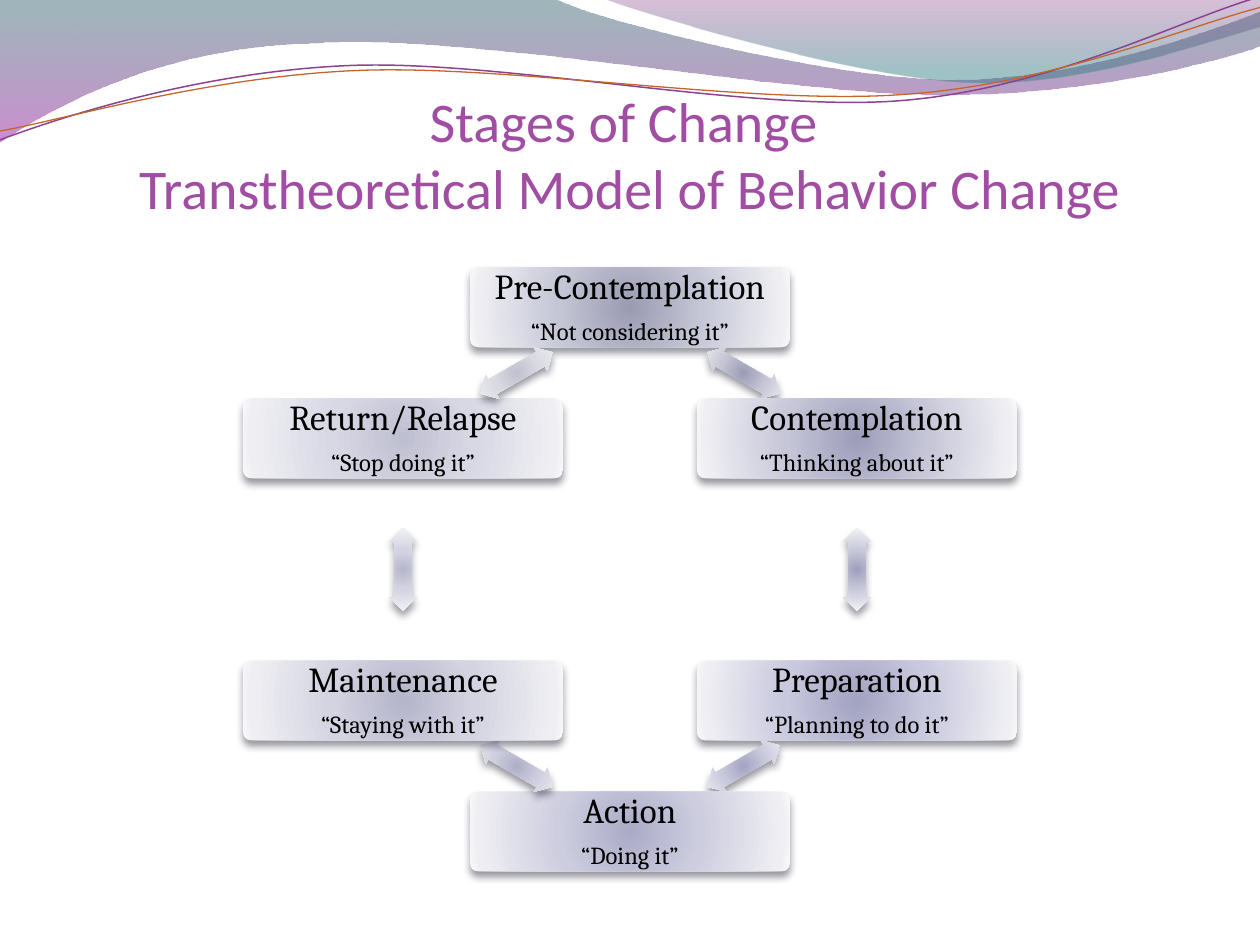
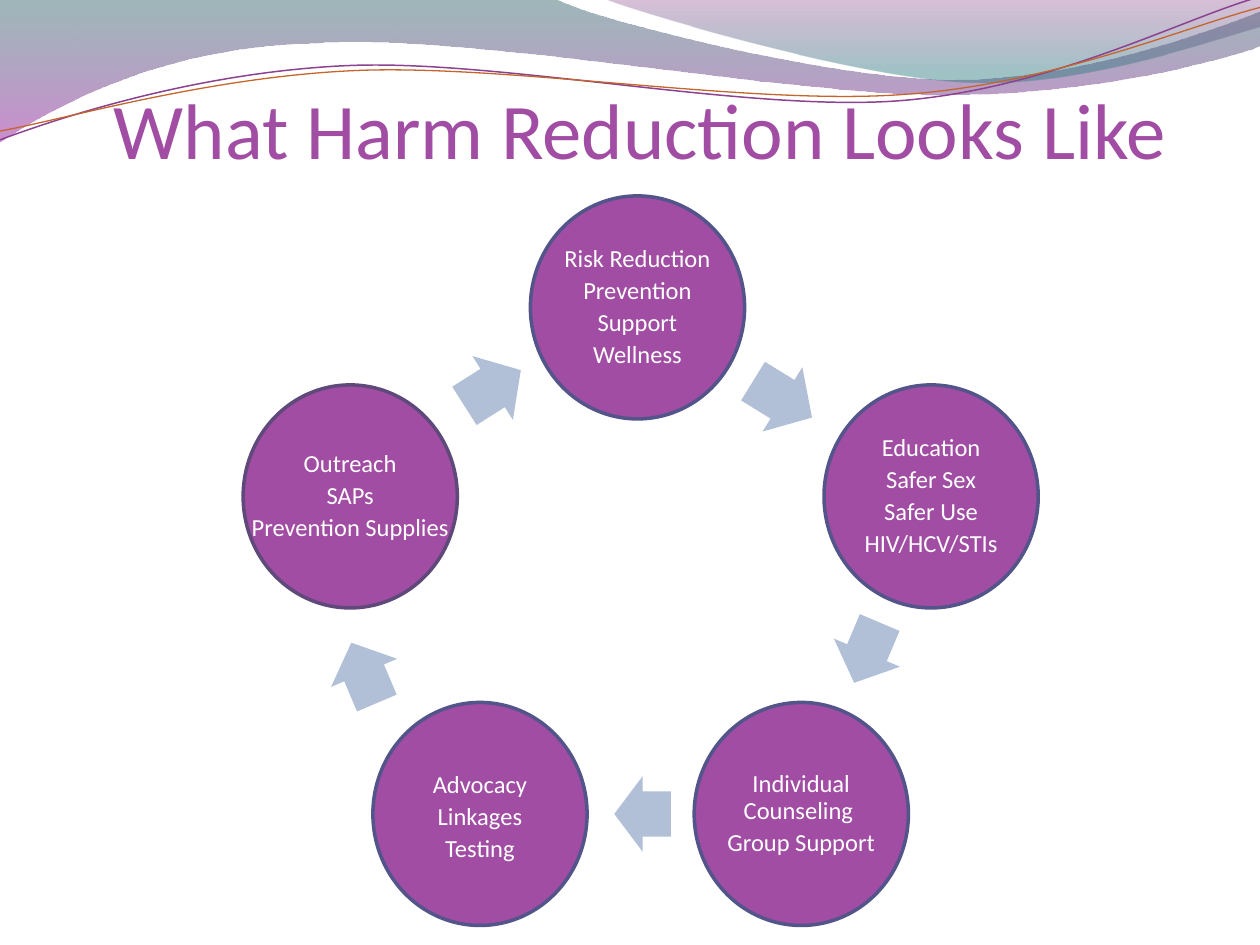
from dataclasses import dataclass
from math import cos, radians, sin

from lxml.etree import SubElement
from pptx import Presentation
from pptx.dml.color import RGBColor
from pptx.enum.shapes import MSO_SHAPE
from pptx.enum.text import MSO_ANCHOR, MSO_AUTO_SIZE, PP_ALIGN
from pptx.oxml.ns import qn
from pptx.util import Inches, Pt

PURPLE = "A04DA3"
NODE_BORDER = "53548A"
CYCLE_ARROW = "B1C0D7"
SHADOW = "222233"
WHITE = "FFFFFF"
BLACK = "000000"
BODY_FONT = "Calibri"
STAGE_FONT = "Cambria"


@dataclass
class Wave:
    """Curve legs hold 6 numbers (cubic), straight legs hold 2."""
    start: tuple
    legs: list
    stops: tuple = ()
    line: str = ""
    width: float = 0
    rotation: float = 0
    center: tuple = (0, 0)


@dataclass
class Stage:
    name: str
    quote: str
    colors: tuple
    arrow_colors: tuple


@dataclass
class Activity:
    lines: list
    center: tuple
    border: str = NODE_BORDER
    top: float = 0


@dataclass
class Arrow:
    center: tuple
    size: tuple
    rotation: float


WAVES = [
    Wave((0, 0), [
        (4.4, -0.01),
        (4.76, 0.17, 6.64, 0.63, 7.58, 0.63),
        (8.53, 0.63, 9.58, 0.26, 10, 0.09),
        (10.01, 0.36),
        (9.83, 0.44, 8.7, 0.76, 7.46, 0.75),
        (6.22, 0.75, 3.82, 0.28, 2.57, 0.34),
        (1.29, 0.36, 0.46, 0.83, -0.01, 1.13),
        (0, 0),
    ], stops=((0, "2B6165", 45), (100, "A32FA8", 55))),
    Wave((4.79, -0.01), [
        (5.09, 0.11, 6.82, 0.62, 7.69, 0.65),
        (8.56, 0.69, 9.61, 0.32, 10, 0.21),
        (10, 0),
        (4.79, -0.01),
    ], stops=((0, "7C2E7F", 30), (80, "2E7980", 45), (100, "2E7980", 45))),
    Wave((0, 1.11), [
        (0.48, 0.93, 1.58, 0.57, 2.77, 0.52),
        (3.95, 0.47, 5.93, 0.89, 7.13, 0.8),
        (8.33, 0.71, 9.38, 0.15, 9.98, -0.02),
    ], line="8C438F", width=0.85, rotation=-2.7, center=(4.99, 0.58)),
    Wave((0, 1.04), [
        (0.47, 0.96, 1.64, 0.61, 2.83, 0.56),
        (4.03, 0.51, 5.97, 0.84, 7.17, 0.75),
        (8.36, 0.67, 9.41, 0.21, 10, 0.06),
    ], line="C4652D", width=0.75, rotation=-2.7, center=(5, 0.59)),
]

# Clockwise from the top; each arrow leads to the next stage
STAGES = [
    Stage("Pre-Contemplation", "“Not considering it”", ("9A9BB2", "C4C6D5"), ("9C9CB6", "C5C5D6")),
    Stage("Contemplation", "“Thinking about it”", ("9D9DBA", "C6C6D8"), ("9F9FBD", "C7C7DA")),
    Stage("Preparation", "“Planning to do it”", ("A2A2C2", "C8C8DE"), ("A4A4C3", "CACADD")),
    Stage("Action", "“Doing it”", ("ABABC7", "CDCDDF"), ("AEAEC8", "CECEE0")),
    Stage("Maintenance", "“Staying with it”", ("B5B5CB", "D3D3E1"), ("B6B6CC", "D3D3E1")),
    Stage("Return/Relapse", "“Stop doing it”", ("BFBFD2", "D8D8E5"), ("C1C1D0", "DADAE3")),
]
STAGE_CENTER = (5, 4.52)
STAGE_RADIUS = 2.08
STAGE_SIZE = (2.54, 0.63)
STAGE_ARROW_SIZE = (0.66, 0.22)

ACTIVITIES = [
    Activity(["Risk Reduction", "Prevention", "Support", "Wellness"], (5.06, 2.44)),
    Activity(["Education", "Safer Sex", "Safer Use", "HIV/HCV/STIs"], (7.39, 3.94)),
    Activity(["Individual\vCounseling ", "Group Support"], (6.36, 6.46)),
    Activity(["Advocacy", "Linkages", "Testing"], (3.81, 6.46), top=0.06),
    Activity(["Outreach", "SAPs", "Prevention Supplies"], (2.78, 3.94), "5F497A"),
]
ACTIVITY_SIZE = (1.7, 1.77)
ACTIVITY_ARROWS = [
    Arrow((6.21, 3.17), (0.55, 0.6), 31.7),
    Arrow((6.88, 5.18), (0.52, 0.57), 113),
    Arrow((5.1, 6.46), (0.45, 0.6), 180),
    Arrow((2.89, 5.34), (0.52, 0.57), 247),
    Arrow((3.91, 3.08), (0.53, 0.6), 327.6),
]


def rgb(value: str) -> RGBColor:
    return RGBColor.from_string(value)


# Text
def write_text(text_frame, lines: list, *, sizes: list, font: str, color: str,
               spacing: float = 1.0, gap: float = 0, anchor=MSO_ANCHOR.MIDDLE,
               wrap: bool = True, top: float = 0) -> None:
    text_frame.auto_size = MSO_AUTO_SIZE.NONE
    text_frame.word_wrap = wrap
    text_frame.vertical_anchor = anchor
    text_frame.margin_left = text_frame.margin_right = text_frame.margin_bottom = 0
    text_frame.margin_top = Inches(top)
    for index, (line, size) in enumerate(zip(lines, sizes)):
        paragraph = text_frame.add_paragraph() if index else text_frame.paragraphs[0]
        paragraph.text = line
        paragraph.alignment = PP_ALIGN.CENTER
        paragraph.line_spacing = spacing
        paragraph.space_before = Pt(gap if index else 0)
        for run in paragraph.runs:
            run.font.size = Pt(size)
            run.font.name = font
            run.font.color.rgb = rgb(color)
        for line_break in paragraph._p.findall(qn("a:br")):
            SubElement(line_break, qn("a:rPr"), sz=str(size * 100))


# Fills and effects
def add_color(parent, color: str, opacity: int = 100) -> None:
    element = SubElement(parent, qn("a:srgbClr"), val=color)
    if opacity < 100:
        SubElement(element, qn("a:alpha"), val=str(opacity * 1000))


def fill_gradient(shape, stops: tuple, radial: bool = False) -> None:
    shape.fill.background()
    properties = shape.element.spPr
    empty_fill = properties.find(qn("a:noFill"))
    gradient = SubElement(properties, qn("a:gradFill"), rotWithShape="1")
    properties.replace(empty_fill, gradient)
    stop_list = SubElement(gradient, qn("a:gsLst"))
    for position, color, opacity in stops:
        add_color(SubElement(stop_list, qn("a:gs"), pos=str(position * 1000)), color, opacity)
    if radial:
        circle = SubElement(gradient, qn("a:path"), path="circle")
        SubElement(circle, qn("a:fillToRect"), l="50000", t="50000", r="50000", b="50000")
    else:
        SubElement(gradient, qn("a:lin"), ang="5400000", scaled="0")


def add_soft_shadow(shape) -> None:
    effects = shape.element.spPr.find(qn("a:effectLst"))
    shadow = SubElement(effects, qn("a:outerShdw"), blurRad=str(Pt(4.5)), dist=str(Pt(3)),
                        dir="5400000", rotWithShape="0")
    add_color(shadow, SHADOW, 48)


# Shapes
def add_centered(slide, kind, center: tuple, size: tuple, *, rotation: float = 0,
                 adjustments: tuple = (), fill: str = "", line: str = "",
                 glow: tuple = ()):
    (x, y), (width, height) = center, size
    shape = slide.shapes.add_shape(kind, Inches(x - width / 2), Inches(y - height / 2),
                                   Inches(width), Inches(height))
    shape.rotation = rotation
    shape.shadow.inherit = False
    for index, value in enumerate(adjustments):
        shape.adjustments[index] = value
    if glow:
        inner, middle = glow
        fill_gradient(shape, ((0, inner, 100), (43, middle, 100),
                              (93, "EFEFF3", 100), (100, "FAFAFB", 100)), radial=True)
        add_soft_shadow(shape)
    else:
        shape.fill.solid()
        shape.fill.fore_color.rgb = rgb(fill)
    if line:
        shape.line.color.rgb = rgb(line)
        shape.line.width = Pt(2)
    else:
        shape.line.fill.background()
    return shape


def wave_vertex(wave: Wave, x: float, y: float) -> tuple:
    """Place a point so that the rotated shape shows it at x, y."""
    angle = radians(-wave.rotation)
    across, down = x - wave.center[0], y - wave.center[1]
    return (Inches(wave.center[0] + across * cos(angle) - down * sin(angle)),
            Inches(wave.center[1] + across * sin(angle) + down * cos(angle)))


def bend_legs(shape, legs: list) -> None:
    """Turn each run of three line segments into the cubic curve it outlines."""
    segments = iter(list(shape.element.spPr.iter(qn("a:lnTo"))))
    for leg in legs:
        parts = [next(segments) for _ in range(len(leg) // 2)]
        if len(parts) == 3:
            outline = parts[0].getparent()
            curve = SubElement(outline, qn("a:cubicBezTo"))
            outline.replace(parts[0], curve)
            for part in parts:
                curve.append(part[0])
            for part in parts[1:]:
                outline.remove(part)


def add_wave(slide, wave: Wave):
    vertices = [wave_vertex(wave, *leg[index:index + 2])
                for leg in wave.legs for index in range(0, len(leg), 2)]
    builder = slide.shapes.build_freeform(*wave_vertex(wave, *wave.start))
    builder.add_line_segments(vertices, close=bool(wave.stops))
    shape = builder.convert_to_shape()
    bend_legs(shape, wave.legs)
    shape.rotation = wave.rotation
    shape.shadow.inherit = False
    if wave.stops:
        fill_gradient(shape, wave.stops)
        shape.line.fill.background()
    else:
        shape.fill.background()
        shape.line.color.rgb = rgb(wave.line)
        shape.line.width = Pt(wave.width)
    return shape


# Slides
def add_waves_to_layout(slide) -> None:
    """Draw the header waves and move them to the layout all slides share."""
    for wave in WAVES:
        slide.slide_layout.shapes.element.append(add_wave(slide, wave).element)


def add_titled_slide(presentation, title: str, size: int, left: float, top: float):
    slide = presentation.slides.add_slide(presentation.slide_layouts[5])
    shape = slide.shapes.title
    shape.left, shape.top = Inches(left), Inches(top)
    shape.width, shape.height = Inches(9), Inches(1.25)
    write_text(shape.text_frame, [title], sizes=[size], font=BODY_FONT, color=PURPLE,
               anchor=MSO_ANCHOR.BOTTOM, top=0.05)
    return slide


def ring_point(index: int) -> tuple:
    angle = radians(360 / len(STAGES) * index)
    return (STAGE_CENTER[0] + STAGE_RADIUS * sin(angle),
            STAGE_CENTER[1] - STAGE_RADIUS * cos(angle))


def build_stages(presentation) -> None:
    slide = add_titled_slide(presentation, "Stages of Change \vTranstheoretical Model of Behavior Change",
                             32, 0.5, 0.5)
    add_waves_to_layout(slide)
    turn = 360 / len(STAGES)
    for index, stage in enumerate(STAGES):
        here, following = ring_point(index), ring_point(index + 1)
        box = add_centered(slide, MSO_SHAPE.ROUNDED_RECTANGLE, here, STAGE_SIZE,
                           adjustments=(0.1,), glow=stage.colors)
        write_text(box.text_frame, [stage.name, stage.quote], sizes=[20, 14],
                   font=STAGE_FONT, color=BLACK, spacing=0.9, gap=7)
        middle = ((here[0] + following[0]) / 2, (here[1] + following[1]) / 2)
        add_centered(slide, MSO_SHAPE.LEFT_RIGHT_ARROW, middle, STAGE_ARROW_SIZE,
                     rotation=turn * (index + 0.5), adjustments=(0.6, 0.5),
                     glow=stage.arrow_colors)


def build_harm_reduction(presentation) -> None:
    slide = add_titled_slide(presentation, "What Harm Reduction Looks Like", 45, 0.58, 0.14)
    for activity, arrow in zip(ACTIVITIES, ACTIVITY_ARROWS):
        circle = add_centered(slide, MSO_SHAPE.OVAL, activity.center, ACTIVITY_SIZE,
                              fill=PURPLE, line=activity.border)
        write_text(circle.text_frame, activity.lines, sizes=[14] * len(activity.lines),
                   font=BODY_FONT, color=WHITE, spacing=0.9, gap=3.1, wrap=False,
                   top=activity.top)
        add_centered(slide, MSO_SHAPE.RIGHT_ARROW, arrow.center, arrow.size,
                     rotation=arrow.rotation, adjustments=(0.6, 0.5), fill=CYCLE_ARROW)


def main() -> None:
    presentation = Presentation()
    presentation.slide_width, presentation.slide_height = Inches(10), Inches(7.5)
    build_stages(presentation)
    build_harm_reduction(presentation)
    presentation.save("out.pptx")


if __name__ == "__main__":
    main()
